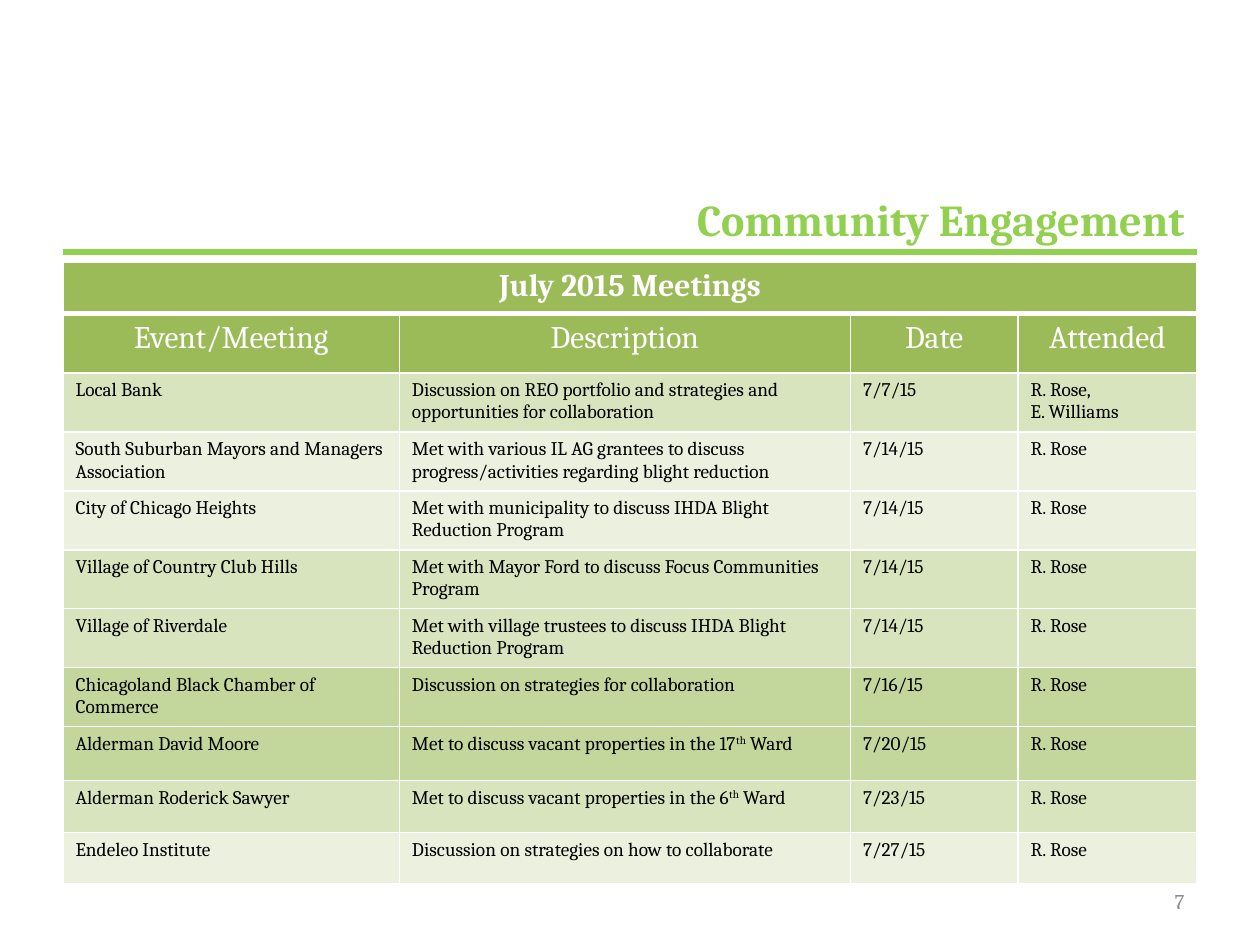
from lxml import etree
from pptx import Presentation
from pptx.dml.color import RGBColor
from pptx.enum.shapes import MSO_CONNECTOR
from pptx.enum.text import MSO_ANCHOR, PP_ALIGN
from pptx.oxml.ns import qn
from pptx.util import Inches, Pt

LEFT, CENTER, RIGHT = PP_ALIGN.LEFT, PP_ALIGN.CENTER, PP_ALIGN.RIGHT
BOTTOM, MIDDLE = MSO_ANCHOR.BOTTOM, MSO_ANCHOR.MIDDLE
LINE = MSO_CONNECTOR.STRAIGHT
FONT = "Cambria"
LIME, HEAD, WHITE, BLACK, GRAY = "92D050", "9BBB59", "FFFFFF", "000000", "8C8C8C"
PALE, SOFT, DEEP = "EBF1DE", "D7E4BD", "C3D69B"

# Content: a caret pair marks superscript
TITLE = "Community Engagement"
PAGE = "7"
BANNER = "July 2015 Meetings"
HEADS = ["Event/Meeting", "Description", "Date", "Attended"]
ROSE = "R. Rose"
# Fill, row height, cells
MEETINGS = [
    (SOFT, 0.47, ["Local Bank",
                  "Discussion on REO portfolio and strategies and opportunities for collaboration",
                  "7/7/15", "R. Rose,\nE. Williams"]),
    (PALE, 0.41, ["South Suburban Mayors and Managers Association",
                  "Met with various IL AG grantees to discuss progress/activities regarding blight reduction",
                  "7/14/15", ROSE]),
    (PALE, 0.41, ["City of Chicago Heights",
                  "Met with municipality to discuss IHDA Blight Reduction Program",
                  "7/14/15", ROSE]),
    (SOFT, 0.41, ["Village of Country Club Hills",
                  "Met with Mayor Ford to discuss Focus Communities Program",
                  "7/14/15", ROSE]),
    (SOFT, 0.43, ["Village of Riverdale",
                  "Met with village trustees to discuss IHDA Blight Reduction Program",
                  "7/14/15", ROSE]),
    (DEEP, 0.43, ["Chicagoland Black Chamber of Commerce",
                  "Discussion on strategies for collaboration",
                  "7/16/15", ROSE]),
    (DEEP, 0.43, ["Alderman David Moore",
                  "Met to discuss vacant properties in the 17^th^ Ward",
                  "7/20/15", ROSE]),
    (SOFT, 0.41, ["Alderman Roderick Sawyer",
                  "Met to discuss vacant properties in the 6^th^ Ward",
                  "7/23/15", ROSE]),
    (PALE, 0.41, ["Endeleo Institute",
                  "Discussion on strategies on how to collaborate",
                  "7/27/15", ROSE]),
]
WIDTHS = [2.67, 3.58, 1.33, 1.42]
ROWS = [(HEAD, 0.41, [BANNER]), (HEAD, 0.47, HEADS)] + MEETINGS


def rgb(code):
    return RGBColor.from_string(code)


def write(frame, text, size, color, align=LEFT, bold=False):
    for n, line in enumerate(text.split("\n")):
        para = frame.paragraphs[0] if n == 0 else frame.add_paragraph()
        para.alignment = align
        for i, part in enumerate(line.split("^")):
            run = para.add_run()
            run.text = part
            font = run.font
            font.name, font.size, font.bold = FONT, Pt(size), bold
            font.color.rgb = rgb(color)
            if i % 2:
                run._r.get_or_add_rPr().set("baseline", "30000")


def add_text(slide, box, text, size, color, anchor, bold=False):
    frame = slide.shapes.add_textbox(*map(Inches, box)).text_frame
    frame.word_wrap = True
    frame.vertical_anchor = anchor
    write(frame, text, size, color, RIGHT, bold)


def paint(cell, color, base):
    """Give a cell its borders, then its fill."""
    props = cell._tc.get_or_add_tcPr()
    for side, width in (("L", 1), ("R", 1), ("T", 1), ("B", base)):
        edge = etree.SubElement(props, qn("a:ln" + side), w=str(Pt(width)))
        fill = etree.SubElement(edge, qn("a:solidFill"))
        etree.SubElement(fill, qn("a:srgbClr"), val=WHITE)
    cell.fill.solid()
    cell.fill.fore_color.rgb = rgb(color)


def add_grid(slide):
    high = sum(row[1] for row in ROWS)
    box = map(Inches, (0.5, 2.08, sum(WIDTHS), high))
    table = slide.shapes.add_table(len(ROWS), len(WIDTHS), *box).table
    for col, width in zip(table.columns, WIDTHS):
        col.width = Inches(width)
    for r, (color, height, texts) in enumerate(ROWS):
        table.rows[r].height = Inches(height)
        for c in range(len(WIDTHS)):
            paint(table.cell(r, c), color, 1 if r else 3)
        style = (18, WHITE, CENTER, r == 0) if r < 2 else (11, BLACK)
        for c, text in enumerate(texts):
            write(table.cell(r, c).text_frame, text, *style)
    table.cell(0, 0).merge(table.cell(0, len(WIDTHS) - 1))


def main():
    deck = Presentation()
    deck.slide_width, deck.slide_height = Inches(10), Inches(7.5)
    slide = deck.slides.add_slide(deck.slide_layouts[6])

    # Title and rule
    rule = slide.shapes.add_connector(LINE, *map(Inches, (0.5, 2, 9.5, 2)))
    rule.line.color.rgb = rgb(LIME)
    rule.line.width = Pt(3)
    etree.SubElement(rule._element.spPr, qn("a:effectLst"))
    add_text(slide, (0.5, 1, 9, 1), TITLE, 25.2, LIME, BOTTOM, True)

    # Meetings table and page number
    add_grid(slide)
    add_text(slide, (7.17, 6.95, 2.33, 0.4), PAGE, 12, GRAY, MIDDLE)
    deck.save("out.pptx")


if __name__ == "__main__":
    main()
